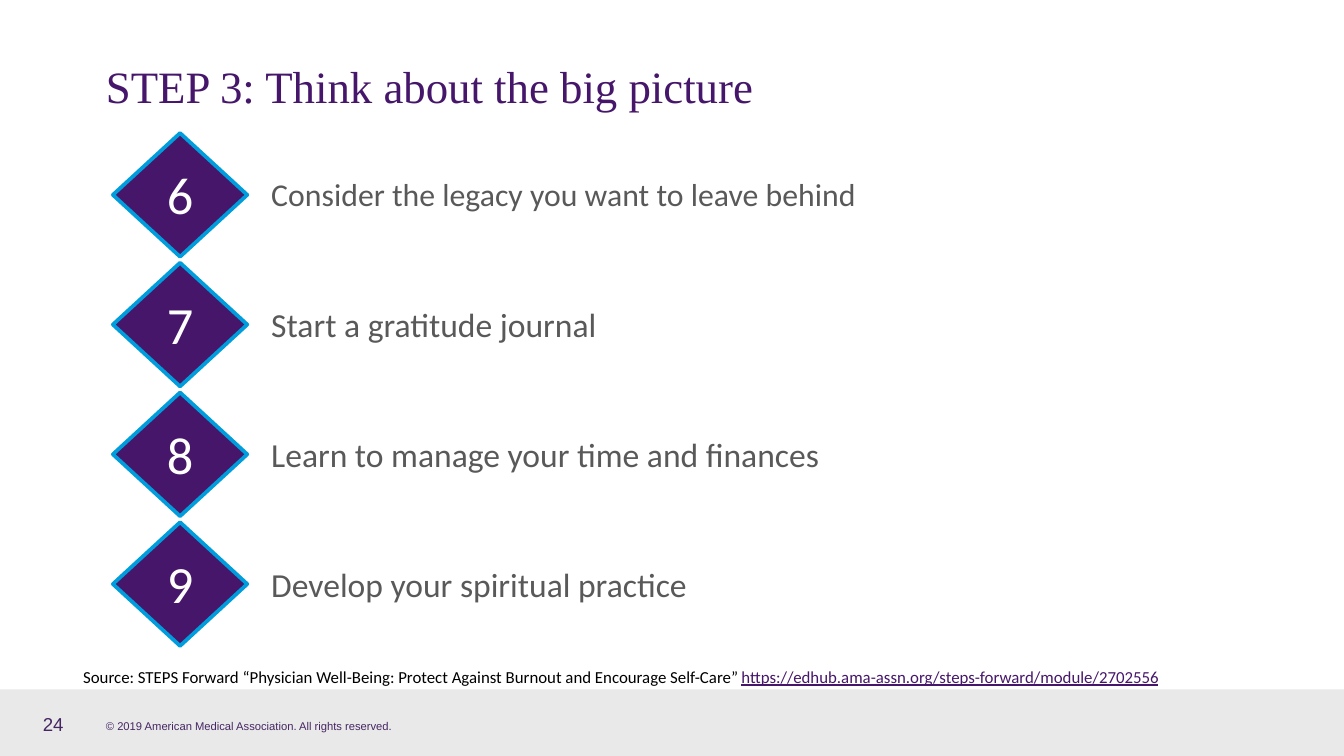
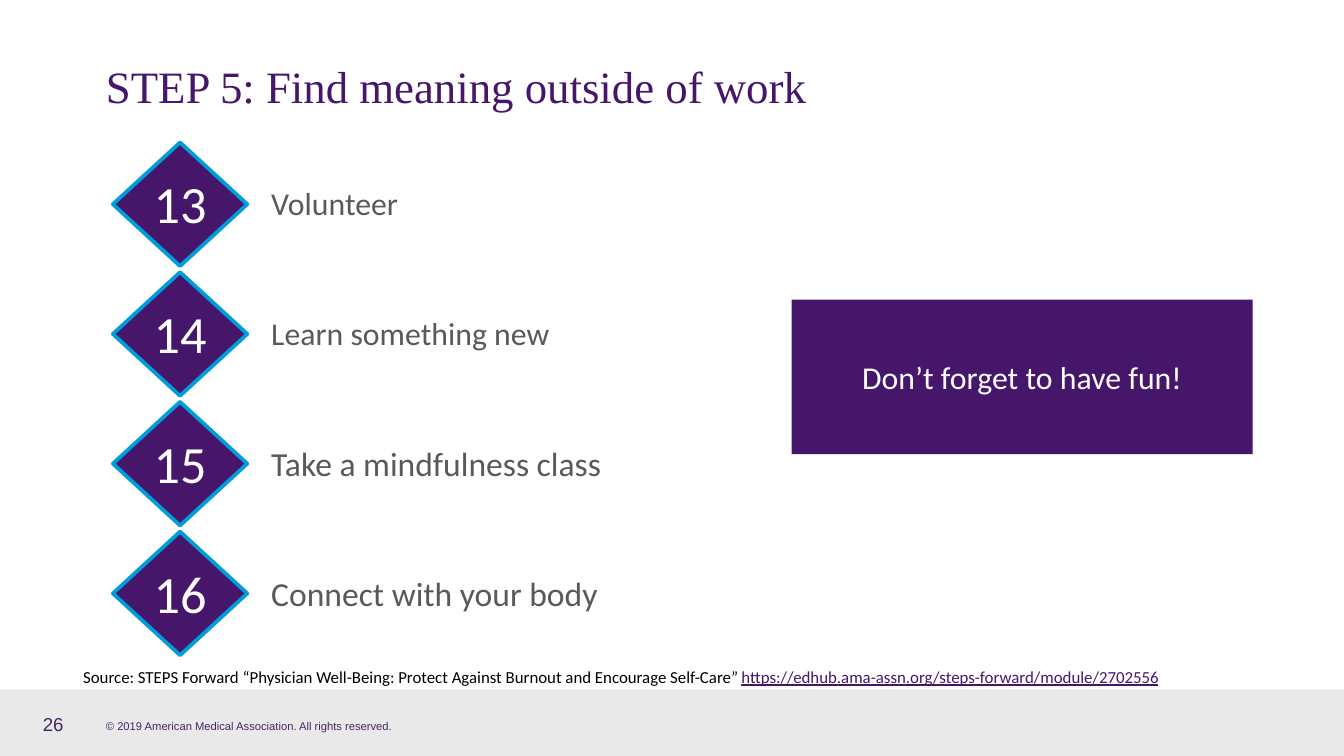
from lxml.etree import SubElement
from pptx import Presentation
from pptx.dml.color import RGBColor
from pptx.enum.shapes import MSO_SHAPE
from pptx.enum.text import MSO_ANCHOR, PP_ALIGN
from pptx.oxml.ns import qn
from pptx.util import Inches, Pt

COLOURS = {
    "purple": "46166B",
    "footer": "452663",
    "blue": "009DDC",
    "grey": "595959",
    "band": "E0E0E0",
    "white": "FFFFFF",
    "black": "000000",
}
SOURCE = "Source: STEPS Forward “Physician Well-Being: Protect Against Burnout and Encourage Self-Care” "
SOURCE_URL = "https://edhub.ama-assn.org/steps-forward/module/2702556"
COPYRIGHT = "© 2019 American Medical Association. All rights reserved."

# Shares of the slide in percent: x and width of its width, y and height of its height
ROW_PITCH = 17.16
DIAMOND_LEFT, DIAMOND_WIDTH, DIAMOND_HEIGHT = 8.4, 10, 16.36

STEPS = [
    {
        "page": "24",
        "title": "STEP 3: Think about the big picture",
        "first_row": 17.6,
        "tips": [
            ("6", "Consider the legacy you want to leave behind", 17),
            ("7", "Start a gratitude journal", 18),
            ("8", "Learn to manage your time and finances", 18),
            ("9", "Develop your spiritual practice", 18),
        ],
        "callout": None,
    },
    {
        "page": "26",
        "title": "STEP 5: Find meaning outside of work",
        "first_row": 18.84,
        "tips": [
            ("13", "Volunteer", 17),
            ("14", "Learn something new", 17),
            ("15", "Take a mindfulness class", 18),
            ("16", "Connect with your body", 18),
        ],
        "callout": "Don’t forget to have fun!",
    },
]

prs = Presentation()
prs.slide_width, prs.slide_height = Inches(10), Inches(5.625)


def add_block(slide, area, fill=None, preset=MSO_SHAPE.RECTANGLE):
    """Add a filled shape, or a text box when there is no fill."""
    x, y, w, h = area
    box = (int(prs.slide_width * x / 100), int(prs.slide_height * y / 100),
           int(prs.slide_width * w / 100), int(prs.slide_height * h / 100))
    if fill is None:
        return slide.shapes.add_textbox(*box)
    block = slide.shapes.add_shape(preset, *box)
    block.shadow.inherit = False
    block.fill.solid()
    block.fill.fore_color.rgb = RGBColor.from_string(COLOURS[fill])
    block.line.fill.background()
    return block


def write(block, text, size, colour, font="Calibri", align=PP_ALIGN.LEFT,
          anchor=MSO_ANCHOR.TOP):
    """Fill a block with one formatted paragraph and return it."""
    frame = block.text_frame
    frame.text = text
    frame.word_wrap = True
    frame.vertical_anchor = anchor
    paragraph = frame.paragraphs[0]
    paragraph.alignment = align
    run = paragraph.runs[0]
    run.font.name, run.font.size = font, Pt(size)
    run.font.color.rgb = RGBColor.from_string(COLOURS[colour])
    return paragraph


for step in STEPS:
    slide = prs.slides.add_slide(prs.slide_layouts[6])

    # Footer band, copyright and page number
    band = add_block(slide, (0, 91.2, 100, 8.8), "band")
    band_colour = band.fill._xPr.find(qn("a:solidFill"))[0]
    SubElement(band_colour, qn("a:alpha"), val="70000")
    write(add_block(slide, (6.9, 94.22, 27.6, 3.56)), COPYRIGHT, 6, "footer", "Arial")
    write(add_block(slide, (2.2, 93.16, 10.1, 5.33)), step["page"], 10, "footer",
          "Arial", anchor=MSO_ANCHOR.MIDDLE)

    # Title
    write(add_block(slide, (6.9, 2.67, 86.2, 17.42)), step["title"], 24, "purple",
          "Times New Roman", anchor=MSO_ANCHOR.MIDDLE)

    # Numbered tips
    for row, (number, tip, tip_size) in enumerate(step["tips"]):
        top = step["first_row"] + row * ROW_PITCH
        diamond = add_block(slide, (DIAMOND_LEFT, top, DIAMOND_WIDTH, DIAMOND_HEIGHT),
                            "purple", MSO_SHAPE.DIAMOND)
        diamond.line.color.rgb = RGBColor.from_string(COLOURS["blue"])
        diamond.line.width = Pt(2)
        write(add_block(slide, (9.95, top + 3, 6.9, 10.13)), number, 28, "white",
              align=PP_ALIGN.CENTER)
        write(add_block(slide, (19.2, top + 4.6, 68.7, 6.93)), tip, tip_size, "grey")

    # Callout
    if step["callout"]:
        write(add_block(slide, (58.9, 39.64, 34.3, 20.44), "purple"), step["callout"],
              17, "white", align=PP_ALIGN.CENTER, anchor=MSO_ANCHOR.MIDDLE)

    # Source line
    source = write(add_block(slide, (5.2, 87.29, 84.2, 4.44)), SOURCE, 9, "black")
    address = source.add_run()
    address.text = SOURCE_URL
    address.font.name, address.font.size = "Calibri", Pt(9)
    address.font.underline = True
    address.font.color.rgb = RGBColor.from_string(COLOURS["purple"])

prs.save("out.pptx")
